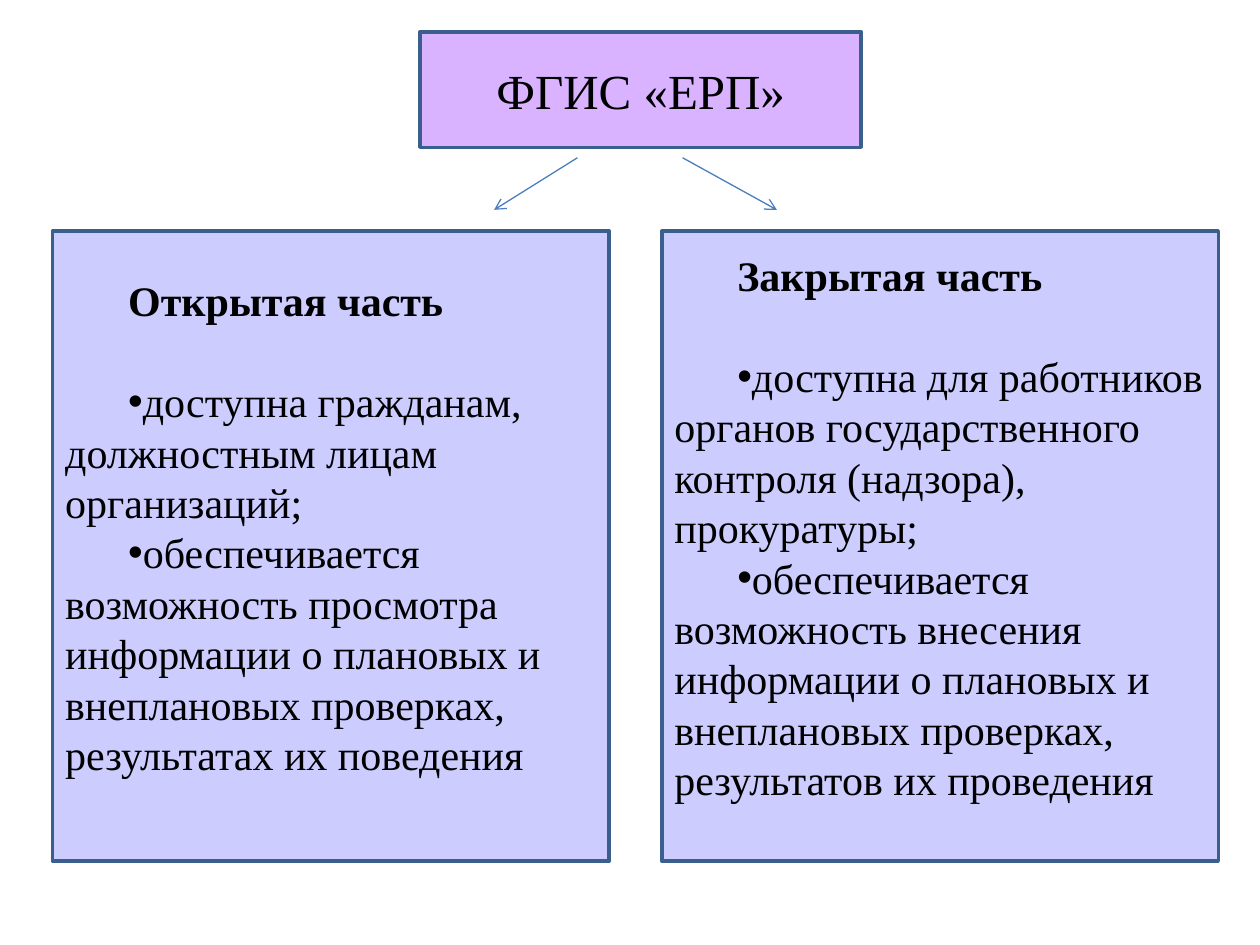
import pptx
import pptx.util
import pptx.dml.color
import pptx.enum.shapes
import pptx.enum.text
import pptx.oxml
import pptx.oxml.ns
from pptx.util import Cm

COLOURS = {
    "title_fill": "D9B3FF",
    "part_fill": "CCCCFF",
    "border": "3A5F8C",
    "arrow": "4B7EBC",
    "text": "000000",
}
FONT = "Times New Roman"
PARTS = [
    ("Открытая часть", [
        "доступна гражданам, должностным лицам организаций;",
        "обеспечивается возможность просмотра информации о плановых и "
        "внеплановых проверках, результатах их поведения",
    ]),
    ("Закрытая часть", [
        "доступна для работников органов государственного контроля "
        "(надзора), прокуратуры;",
        "обеспечивается возможность внесения информации о плановых и "
        "внеплановых проверках, результатов их проведения",
    ]),
]
PART_LEFT, PART_STEP = 1.06, 12.28
ARROWS = [(11.64, 9.96), (13.76, 15.66)]


def colour(name):
    return pptx.dml.color.RGBColor.from_string(COLOURS[name])


def add_child(parent, tag, **attributes):
    child = pptx.oxml.ns.qn(tag)
    element = parent.makeelement(child, attributes)
    parent.append(element)
    return element


def style_box(box, left, top, width, height, fill):
    box.left, box.top, box.width, box.height = map(Cm, (left, top, width, height))
    box.fill.solid()
    box.fill.fore_color.rgb = colour(fill)
    box.line.color.rgb = colour("border")
    box.line.width = pptx.util.Pt(2)
    frame = box.text_frame
    frame.word_wrap = True
    frame.auto_size = pptx.enum.text.MSO_AUTO_SIZE.NONE
    frame.vertical_anchor = pptx.enum.text.MSO_ANCHOR.MIDDLE


def add_text(para, text, size, bold=False):
    span = para.add_run()
    span.text = text
    span.font.name = FONT
    span.font.size = pptx.util.Pt(size)
    span.font.bold = bold
    span.font.color.rgb = colour("text")


def indent_first_line(para, bullet):
    """Indent only the first line, with or without a bullet in front."""
    para.space_before = pptx.util.Pt(0)
    properties = para._p.get_or_add_pPr()
    properties.set("marL", "0")
    properties.set("indent", str(Cm(1.27)))
    if bullet:
        add_child(properties, "a:buFont", typeface="Arial")
        add_child(properties, "a:buChar", char="•")
    else:
        add_child(properties, "a:buNone")


def fill_title(box):
    style_box(box, 8.47, 0.64, 8.89, 2.33, "title_fill")
    para = box.text_frame.paragraphs[0]
    para.alignment = pptx.enum.text.PP_ALIGN.CENTER
    add_text(para, "ФГИС «ЕРП»", 28)


def fill_part(box, left, heading, items):
    style_box(box, left, 4.66, 11.22, 12.7, "part_fill")
    frame = box.text_frame
    frame.margin_bottom = Cm(0.9)
    para = frame.paragraphs[0]
    para.space_after = pptx.util.Pt(28.8)
    indent_first_line(para, bullet=False)
    add_text(para, heading, 24, bold=True)
    for item in items:
        para = frame.add_paragraph()
        indent_first_line(para, bullet=True)
        add_text(para, item, 24)


def add_arrow(page, start, end):
    arrow = page.shapes.add_connector(
        pptx.enum.shapes.MSO_CONNECTOR.STRAIGHT,
        Cm(start), Cm(3.18), Cm(end), Cm(4.23))
    arrow.line.color.rgb = colour("arrow")
    arrow.line.width = pptx.util.Pt(0.75)
    add_child(arrow.line._get_or_add_ln(), "a:tailEnd", type="arrow")
    add_child(arrow._element.spPr, "a:effectLst")


def main():
    deck = pptx.Presentation()
    deck.slide_width, deck.slide_height = Cm(25.4), Cm(19.05)
    page = deck.slides.add_slide(deck.slide_layouts.get_by_name("Two Content"))
    fill_title(page.shapes.title)
    for index, (heading, items) in enumerate(PARTS):
        fill_part(page.placeholders[index + 1],
                  PART_LEFT + index * PART_STEP, heading, items)
    for start, end in ARROWS:
        add_arrow(page, start, end)
    deck.save("out.pptx")


if __name__ == "__main__":
    main()
